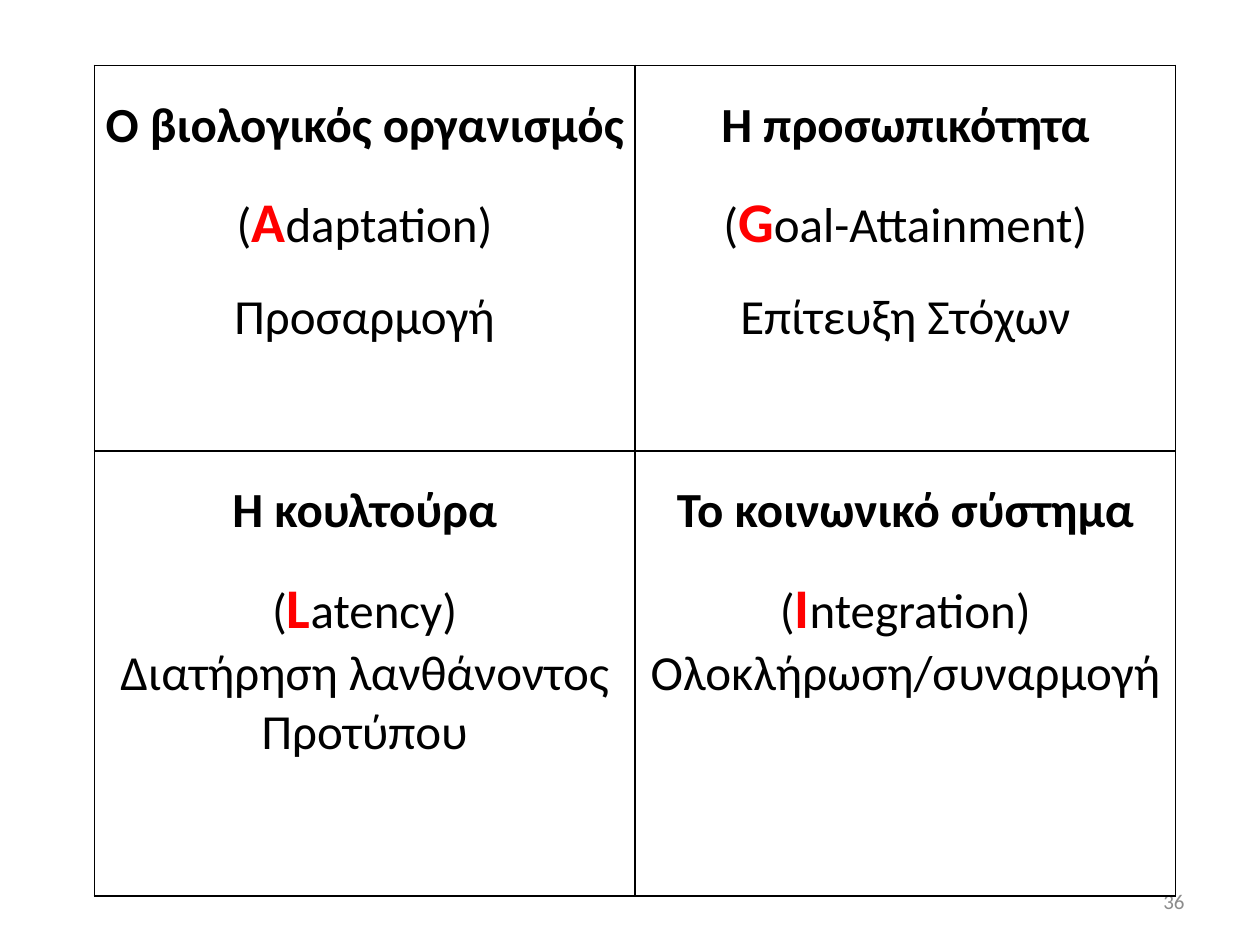
from dataclasses import dataclass

import lxml.etree
import pptx
import pptx.dml.color
import pptx.enum.text
import pptx.oxml.ns
import pptx.util

Cm = pptx.util.Cm
Pt = pptx.util.Pt
Color = pptx.dml.color.RGBColor
Align = pptx.enum.text.PP_ALIGN
Anchor = pptx.enum.text.MSO_ANCHOR


@dataclass(frozen=True)
class Theme:
    font: str = "Calibri"
    ink: str = "000000"
    accent: str = "FF0000"
    muted: str = "8C8C8C"
    body_size: int = 28
    initial_size: int = 32
    number_size: int = 12
    border_width: int = 1
    wide_spacing: float = 1.5


@dataclass(frozen=True)
class Quadrant:
    system: str
    initial: str
    remainder: str
    translation: tuple[str, ...]
    translation_spacing: float = 1.0


THEME = Theme()
QUADRANTS = (
    (
        Quadrant("Ο βιολογικός οργανισμός", "A", "daptation)",
                 ("Προσαρμογή",), THEME.wide_spacing),
        Quadrant("Η προσωπικότητα", "G", "oal-Attainment)",
                 ("Επίτευξη Στόχων",), THEME.wide_spacing),
    ),
    (
        Quadrant("Η κουλτούρα", "L", "atency)",
                 ("Διατήρηση λανθάνοντος", "Προτύπου")),
        Quadrant("Το κοινωνικό σύστημα", "I", "ntegration)",
                 ("Ολοκλήρωση/συναρμογή",)),
    ),
)
COLUMN_WIDTH = Cm(10.9)
ROW_HEIGHTS = (Cm(7.77), Cm(8.97))


def add_run(paragraph, text: str, size: int = THEME.body_size,
            color: str = THEME.ink, bold: bool = False) -> None:
    run = paragraph.add_run()
    run.text = text
    run.font.name = THEME.font
    run.font.size = Pt(size)
    run.font.bold = bold
    run.font.color.rgb = Color.from_string(color)


def format_paragraph(paragraph, spacing: float):
    paragraph.alignment = Align.CENTER
    paragraph.line_spacing = spacing
    return paragraph


def add_borders(cell) -> None:
    properties = cell._tc.get_or_add_tcPr()
    qn = pptx.oxml.ns.qn
    for side in ("lnL", "lnR", "lnT", "lnB"):
        line = lxml.etree.SubElement(properties, qn(f"a:{side}"),
                                     w=str(Pt(THEME.border_width)))
        fill = lxml.etree.SubElement(line, qn("a:solidFill"))
        lxml.etree.SubElement(fill, qn("a:srgbClr"), val=THEME.ink)


def fill_quadrant(cell, quadrant: Quadrant) -> None:
    add_borders(cell)
    cell.fill.background()
    cell.margin_left = cell.margin_right = Cm(0.17)
    cell.margin_top = cell.margin_bottom = Cm(0)
    cell.vertical_anchor = Anchor.TOP
    frame = cell.text_frame

    heading = format_paragraph(frame.paragraphs[0], THEME.wide_spacing)
    add_run(heading, quadrant.system, bold=True)

    function = format_paragraph(frame.add_paragraph(), THEME.wide_spacing)
    add_run(function, "(")
    add_run(function, quadrant.initial, THEME.initial_size, THEME.accent, True)
    add_run(function, quadrant.remainder)

    for text in quadrant.translation:
        paragraph = format_paragraph(frame.add_paragraph(), quadrant.translation_spacing)
        add_run(paragraph, text)


def add_quadrant_table(slide) -> None:
    shape = slide.shapes.add_table(2, 2, Cm(1.9), Cm(1.32),
                                   COLUMN_WIDTH * 2, sum(ROW_HEIGHTS))
    table = shape.table
    table.first_row = False
    table.horz_banding = False
    for column in table.columns:
        column.width = COLUMN_WIDTH
    for row, height, quadrants in zip(table.rows, ROW_HEIGHTS, QUADRANTS):
        row.height = height
        for cell, quadrant in zip(row.cells, quadrants):
            fill_quadrant(cell, quadrant)


def add_slide_number(slide, number: str) -> None:
    shape = slide.shapes.add_textbox(Cm(18.2), Cm(17.65), Cm(5.93), Cm(1.02))
    frame = shape.text_frame
    frame.word_wrap = True
    frame.vertical_anchor = Anchor.MIDDLE
    paragraph = frame.paragraphs[0]
    paragraph.alignment = Align.RIGHT
    add_run(paragraph, number, THEME.number_size, THEME.muted)


def main() -> None:
    presentation = pptx.Presentation()
    presentation.slide_width = Cm(25.4)
    presentation.slide_height = Cm(19.05)
    slide = presentation.slides.add_slide(presentation.slide_layouts[6])
    add_slide_number(slide, "36")
    add_quadrant_table(slide)
    presentation.save("out.pptx")


if __name__ == "__main__":
    main()
